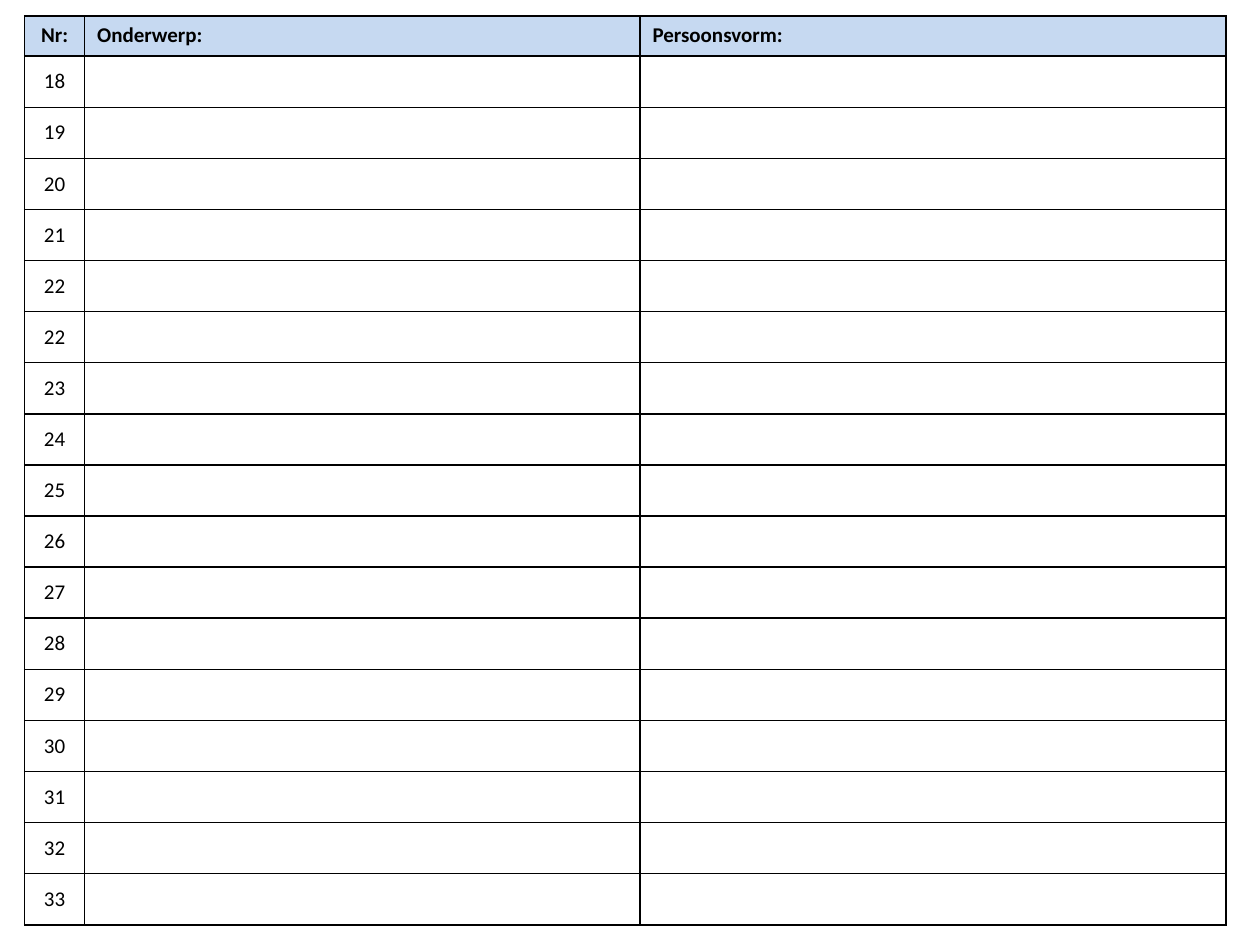
import lxml.etree
import pptx
import pptx.dml.color
import pptx.enum.text
import pptx.oxml.ns
import pptx.util

Pt = pptx.util.Pt
RGB = pptx.dml.color.RGBColor.from_string
ALIGN = pptx.enum.text.PP_ALIGN
ANCHOR = pptx.enum.text.MSO_ANCHOR

# Content: the number 22 appears twice on the sheet
HEADS = ["Nr:", "Onderwerp:", "Persoonsvorm:"]
NUMBERS = [*range(18, 23), *range(22, 34)]

THEME = {"font": "Calibri", "size": 12, "ink": "000000", "head": "C6D9F1", "line": 1}

# Layout in points
SIZE = (720, 540)
LEFT, TOP = 14.1, 9.2
COLS = [34.2, 317.4, 334.8]
HEAD_H, ROW_H = 22.9, 29.2


def write(cell, text, bold=False, align=ALIGN.LEFT, anchor=ANCHOR.TOP):
    cell.vertical_anchor = anchor
    par = cell.text_frame.paragraphs[0]
    par.alignment = align
    run = par.add_run()
    run.text = text
    font = run.font
    font.name, font.size, font.bold = THEME["font"], Pt(THEME["size"]), bold
    font.color.rgb = RGB(THEME["ink"])


def frame(cell):
    """Draw a solid line on all four sides; call before setting the fill."""
    qn = pptx.oxml.ns.qn
    props = cell._tc.get_or_add_tcPr()
    for side in ("lnL", "lnR", "lnT", "lnB"):
        line = lxml.etree.SubElement(props, qn("a:" + side), w=str(Pt(THEME["line"])))
        fill = lxml.etree.SubElement(line, qn("a:solidFill"))
        lxml.etree.SubElement(fill, qn("a:srgbClr"), val=THEME["ink"])


def main():
    deck = pptx.Presentation()
    deck.slide_width, deck.slide_height = map(Pt, SIZE)
    slide = deck.slides.add_slide(deck.slide_layouts[6])

    # Answer table
    heights = [HEAD_H] + [ROW_H] * len(NUMBERS)
    table = slide.shapes.add_table(
        len(heights), len(COLS), Pt(LEFT), Pt(TOP), Pt(sum(COLS)), Pt(sum(heights))
    ).table
    table.first_row = table.horz_banding = False
    for col, width in zip(table.columns, COLS):
        col.width = Pt(width)
    for row, height in zip(table.rows, heights):
        row.height = Pt(height)
    for cell in table.iter_cells():
        frame(cell)
        cell.fill.background()

    # Header row
    for i, head in enumerate(HEADS):
        cell = table.cell(0, i)
        cell.fill.solid()
        cell.fill.fore_color.rgb = RGB(THEME["head"])
        write(cell, head, bold=True, align=ALIGN.LEFT if i else ALIGN.CENTER)

    # Numbered rows, left open for answers
    for i, number in enumerate(NUMBERS, 1):
        write(table.cell(i, 0), str(number), align=ALIGN.CENTER, anchor=ANCHOR.MIDDLE)

    deck.save("out.pptx")


if __name__ == "__main__":
    main()
